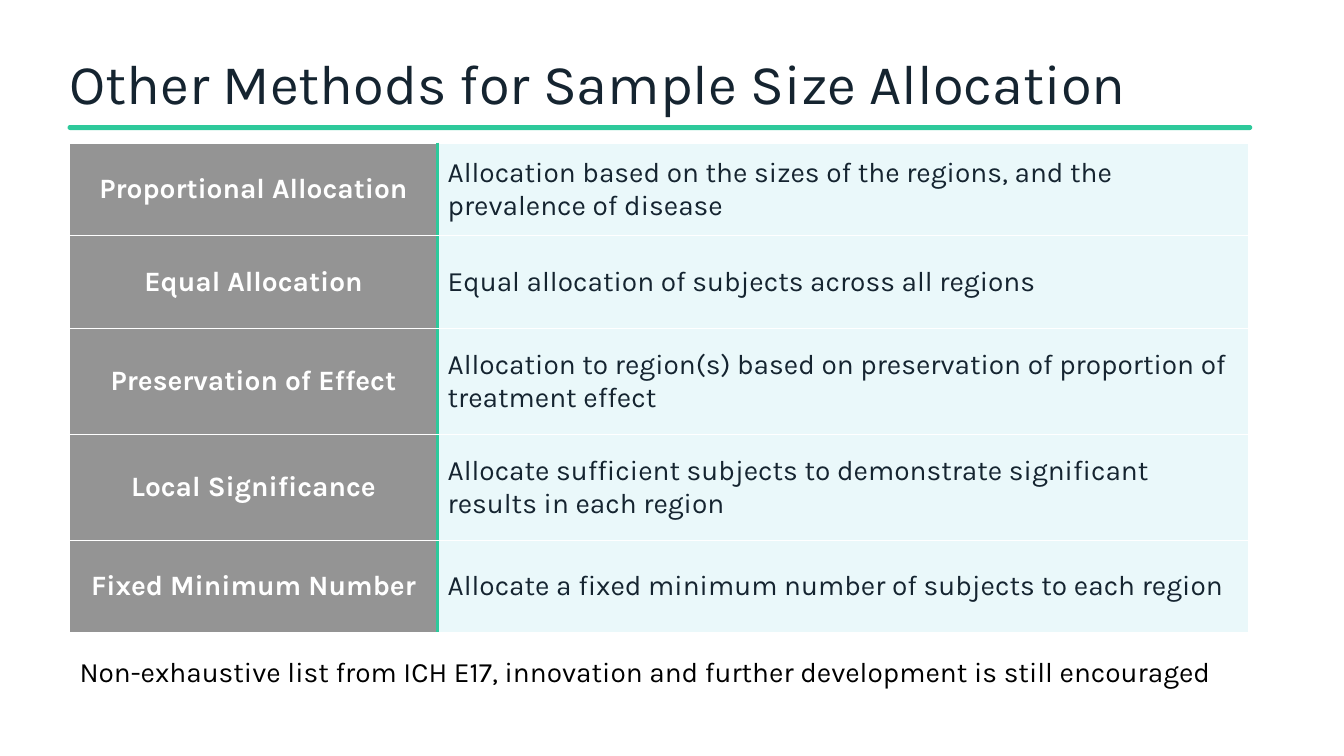
from lxml.etree import SubElement
from pptx import Presentation
from pptx.dml.color import RGBColor
from pptx.enum.shapes import MSO_SHAPE
from pptx.enum.text import MSO_ANCHOR, PP_ALIGN
from pptx.oxml.ns import qn
from pptx.util import Inches, Pt

FONT = "Karla"
NAVY, GREEN, WHITE = "152430", "2EC99B", "FFFFFF"
GREY, PALE_BLUE = "262626", "D6F2F6"
LEFT, WIDTH = 0.69, 11.69
COLUMN_WIDTHS = [3.65, 8.04]

# Method, description, row height
METHODS = [
    ("Proportional Allocation",
     "Allocation based on the sizes of the regions, and the prevalence of disease", 0.92),
    ("Equal Allocation",
     "Equal allocation of subjects across all regions", 0.92),
    ("Preservation of Effect",
     "Allocation to region(s) based on preservation of proportion of treatment effect", 1.05),
    ("Local Significance",
     "Allocate sufficient subjects to demonstrate significant results in each region", 1.05),
    ("Fixed Minimum Number",
     "Allocate a fixed minimum number of subjects to each region", 0.92),
]


def rgb(color):
    return RGBColor.from_string(color)


def write(tf, text, size=20, color=NAVY, bold=False, align=PP_ALIGN.LEFT, spacing=None):
    p = tf.paragraphs[0]
    p.alignment = align
    p.line_spacing = spacing
    r = p.add_run()
    r.text = text
    r.font.name = FONT
    r.font.size = Pt(size)
    r.font.bold = bold
    r.font.color.rgb = rgb(color)


def add_text(s, x, y, w, h, text, anchor=MSO_ANCHOR.TOP, inset=None, **fmt):
    tf = s.shapes.add_textbox(Inches(x), Inches(y), Inches(w), Inches(h)).text_frame
    tf.word_wrap = True
    tf.vertical_anchor = anchor
    if inset is not None:
        tf.margin_left = tf.margin_right = Inches(inset)
        tf.margin_top = tf.margin_bottom = Inches(inset)
    write(tf, text, **fmt)


def add_rule(s, x, y, w, h):
    sp = s.shapes.add_shape(MSO_SHAPE.ROUNDED_RECTANGLE,
                            Inches(x), Inches(y), Inches(w), Inches(h))
    sp.adjustments[0] = 0.5
    sp.shadow.inherit = False
    sp.fill.solid()
    sp.fill.fore_color.rgb = rgb(GREEN)
    sp.line.fill.background()


def set_border(cell, side, color, width):
    ln = SubElement(cell._tc.get_or_add_tcPr(), qn("a:ln" + side), w=str(Pt(width)))
    SubElement(SubElement(ln, qn("a:solidFill")), qn("a:srgbClr"), val=color)


def fill_cell(cell, color, opacity):
    cell.fill.solid()
    cell.fill.fore_color.rgb = rgb(color)
    clr = cell._tc.tcPr.find(qn("a:solidFill")).find(qn("a:srgbClr"))
    SubElement(clr, qn("a:alpha"), val=str(opacity * 1000))


def format_cell(cell, text, fill, divider_side, **fmt):
    cell.vertical_anchor = MSO_ANCHOR.MIDDLE
    cell.margin_left = cell.margin_right = Inches(0.1)
    cell.margin_top = cell.margin_bottom = Inches(0.1)
    # Borders come before the fill in the cell properties
    set_border(cell, divider_side, GREEN, 3)
    for side in "TB":
        set_border(cell, side, WHITE, 1)
    fill_cell(cell, fill, 49)
    write(cell.text_frame, text, **fmt)


def add_methods_table(s, x, y):
    height = sum(h for _, _, h in METHODS)
    table = s.shapes.add_table(len(METHODS), 2, Inches(x), Inches(y),
                               Inches(WIDTH), Inches(height)).table
    table.first_row = table.horz_banding = False
    for column, width in zip(table.columns, COLUMN_WIDTHS):
        column.width = Inches(width)
    for i, (method, description, row_height) in enumerate(METHODS):
        table.rows[i].height = Inches(row_height)
        format_cell(table.cell(i, 0), method, GREY, "R",
                    color=WHITE, bold=True, align=PP_ALIGN.CENTER)
        format_cell(table.cell(i, 1), description, PALE_BLUE, "L")


def main():
    prs = Presentation()
    prs.slide_width, prs.slide_height = Inches(13.33), Inches(7.5)
    s = prs.slides.add_slide(prs.slide_layouts[6])

    # Title and rule
    add_rule(s, 0.67, 1.24, 11.75, 0.05)
    add_text(s, LEFT, 0.38, 12.16, 0.78, "Other Methods for Sample Size Allocation",
             anchor=MSO_ANCHOR.BOTTOM, inset=0, size=40, spacing=0.9)

    # Allocation methods
    add_methods_table(s, LEFT, 1.42)

    # Footnote
    add_text(s, LEFT, 6.44, WIDTH, 0.44,
             "Non-exhaustive list from ICH E17, innovation and further development "
             "is still encouraged", color="000000")

    prs.save("out.pptx")


if __name__ == "__main__":
    main()
